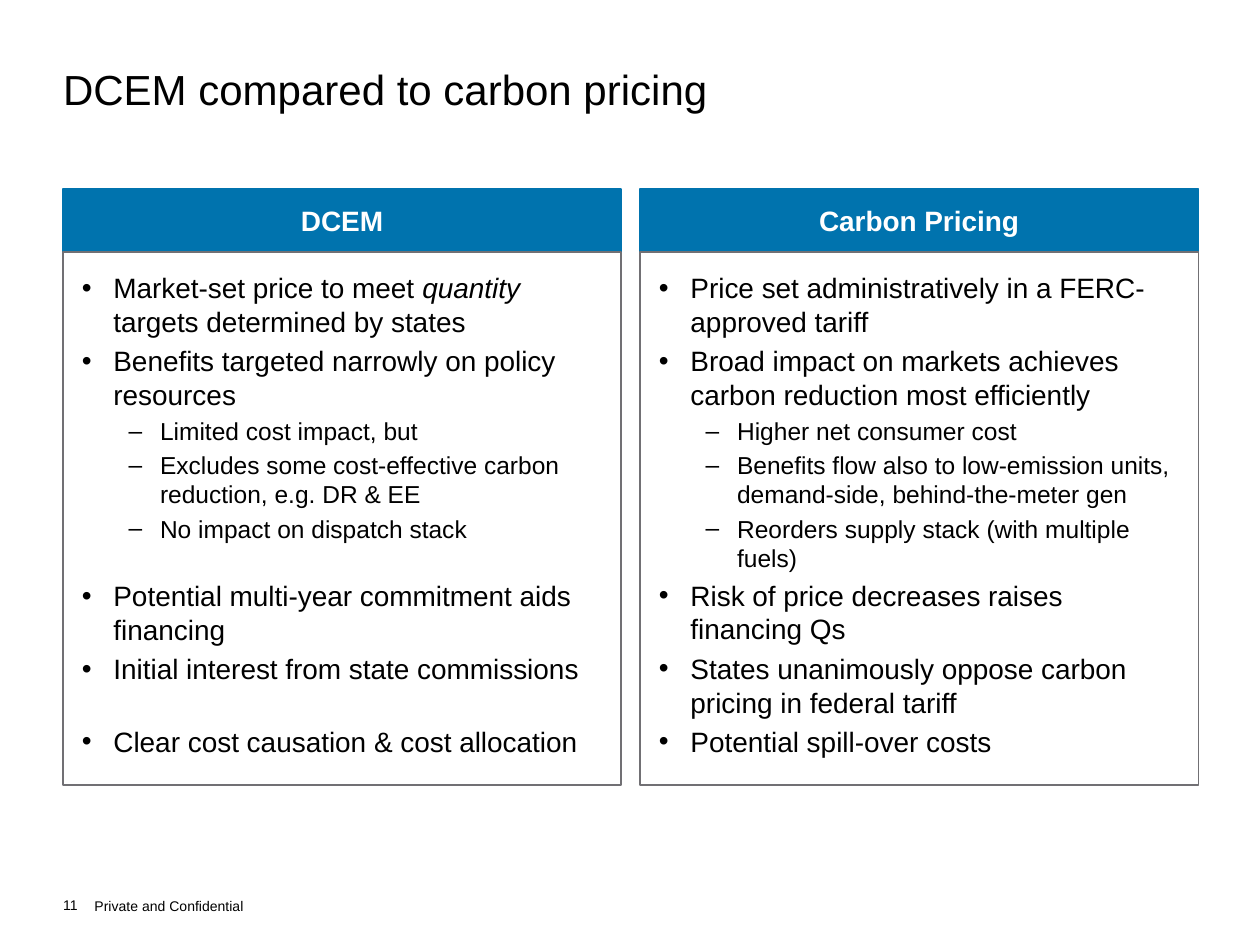
from pptx import Presentation
from pptx.dml.color import RGBColor
from pptx.enum.text import MSO_ANCHOR as ANCHOR, MSO_AUTO_SIZE as AUTOSIZE, PP_ALIGN as ALIGN
from pptx.util import Pt
from lxml.etree import SubElement
from pptx.oxml.ns import qn

PX = 9144  # 100 px to the inch


def rgb(value):
    return RGBColor.from_string(value)


def setup(sp, box, anchor, inset=0, wrap=True):
    """Place a shape and set up its text frame."""
    sp.left, sp.top, sp.width, sp.height = [v * PX for v in box]
    tf = sp.text_frame
    frame = dict(auto_size=AUTOSIZE.NONE, word_wrap=wrap, vertical_anchor=anchor)
    frame.update({f"margin_{side}": inset * PX
                  for side in ("left", "right", "top", "bottom")})
    for name, value in frame.items():
        setattr(tf, name, value)
    return tf


# Level: bullet, left margin, font size, space before, height of a skipped line
LEVELS = [("•", 25, 16, 3.4, 19), ("–", 62, 14, 2.7, 17)]
HANG = 25

# Columns: left, heading, items as (level, text, skipped lines after); * marks italics
COLUMNS = [
    (50, "DCEM", [
        (0, "Market-set price to meet *quantity* targets determined by states", 0),
        (0, "Benefits targeted narrowly on policy resources", 0),
        (1, "Limited cost impact, but", 0),
        (1, "Excludes some cost-effective carbon reduction, e.g. DR & EE", 0),
        (1, "No impact on dispatch stack", 1),
        (0, "Potential multi-year commitment aids financing", 0),
        (0, "Initial interest from state commissions", 1),
        (0, "Clear cost causation & cost allocation", 0),
    ]),
    (508, "Carbon Pricing", [
        (0, "Price set administratively in a FERC-approved tariff", 0),
        (0, "Broad impact on markets achieves carbon reduction most efficiently", 0),
        (1, "Higher net consumer cost", 0),
        (1, "Benefits flow also to low-emission units, demand-side, "
            "behind-the-meter gen", 0),
        (1, "Reorders supply stack (with multiple fuels)", 0),
        (0, "Risk of price decreases raises financing Qs", 0),
        (0, "States unanimously oppose carbon pricing in federal tariff", 0),
        (0, "Potential spill-over costs", 0),
    ]),
]

prs = Presentation()
prs.slide_width, prs.slide_height = 1000 * PX, 750 * PX
s = prs.slides.add_slide(prs.slide_layouts[4])  # Comparison
ph = {sp.placeholder_format.idx: sp for sp in s.placeholders}

# Title, footer and page number
footer = s.shapes.add_textbox(0, 0, PX, PX)
number = s.shapes.add_textbox(0, 0, PX, PX)
for sp, box, anchor, wrap, size, text in [
    (ph[0], (50, 50, 900, 44), ANCHOR.TOP, True, 24, "DCEM compared to carbon pricing"),
    (footer, (75, 713, 120, 13), ANCHOR.BOTTOM, False, 8, "Private and Confidential"),
    (number, (50, 701, 31, 24), ANCHOR.BOTTOM, True, 8, "11"),
]:
    p = setup(sp, box, anchor, wrap=wrap).paragraphs[0]
    p.alignment = ALIGN.LEFT
    r = p.add_run()
    r.text = text
    r.font.name, r.font.size = "Arial", Pt(size)
    r.font.color.rgb = rgb("000000")

# Comparison columns
for col, (left, heading, items) in enumerate(COLUMNS):
    # Heading bar
    sp = ph[1 + 2 * col]
    p = setup(sp, (left, 150, 443, 50), ANCHOR.MIDDLE, 20).paragraphs[0]
    sp.fill.solid()
    sp.fill.fore_color.rgb = sp.line.color.rgb = rgb("0073AE")
    sp.line.width = Pt(0.75)
    p.alignment, p.space_before = ALIGN.CENTER, Pt(0)
    r = p.add_run()
    r.text = heading
    r.font.name, r.font.size, r.font.bold = "Arial", Pt(16), True
    r.font.color.rgb = rgb("FFFFFF")

    # Bulleted list
    sp = ph[2 + 2 * col]
    tf = setup(sp, (left, 200, 443, 423), ANCHOR.TOP, 15)
    sp.line.color.rgb = rgb("717074")
    sp.line.width = Pt(0.75)
    for i, (level, text, skipped) in enumerate(items):
        bullet, margin, size, before, line = LEVELS[level]
        p = tf.add_paragraph() if i else tf.paragraphs[0]
        pPr = p._p.get_or_add_pPr()
        pPr.set("marL", str(margin * PX))
        pPr.set("indent", str(-HANG * PX))
        SubElement(pPr, qn("a:buFont"), typeface="Arial")
        SubElement(pPr, qn("a:buChar"), char=bullet)
        layout = dict(level=level, alignment=ALIGN.LEFT, line_spacing=1.0,
                      space_before=Pt(before if i else 0),
                      space_after=Pt(skipped * line))
        for name, value in layout.items():
            setattr(p, name, value)
        for n, part in enumerate(text.split("*")):
            r = p.add_run()
            r.text = part
            r.font.name, r.font.size = "Arial", Pt(size)
            r.font.color.rgb = rgb("000000")
            if n % 2:
                r.font.italic = True

prs.save("out.pptx")
